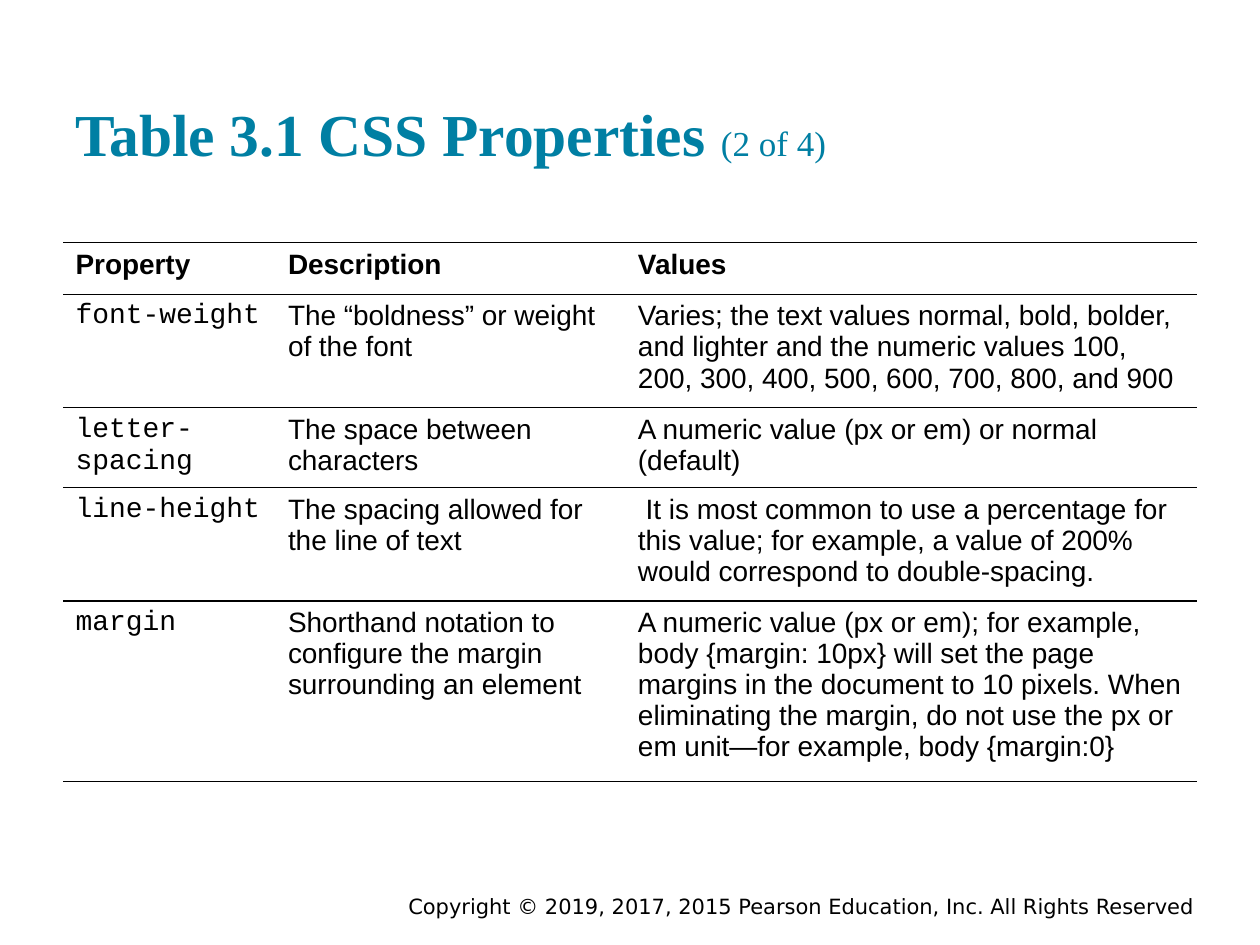
from pptx import Presentation
from pptx.dml.color import RGBColor
from pptx.enum.text import MSO_ANCHOR, PP_ALIGN
from pptx.oxml import parse_xml
from pptx.oxml.ns import nsdecls
from pptx.util import Pt

COLORS = {"title": "007FA3", "text": "000000", "rule": "000000", "cell": "FFFFFF"}
COLUMNS = [121.4, 200, 326.6]
ROW_HEIGHTS = [29.5, 60.5, 44.5, 60.5, 96]
ROWS = [
    ("Property", "Description", "Values"),
    ("font-weight", "The “boldness” or weight of the font",
     "Varies; the text values normal, bold, bolder, and lighter and the numeric "
     "values 100, 200, 300, 400, 500, 600, 700, 800, and 900"),
    ("letter-spacing", "The space between characters",
     "A numeric value (px or em) or normal (default)"),
    ("line-height", "The spacing allowed for the line of text",
     " It is most common to use a percentage for this value; for example, "
     "a value of 200% would correspond to double-spacing."),
    ("margin", "Shorthand notation to configure the margin surrounding an element",
     "A numeric value (px or em); for example, body {margin: 10px} will set the page "
     "margins in the document to 10 pixels. When eliminating the margin, do not use "
     "the px or em unit—for example, body {margin:0}"),
]


def add_run(p, text, font="Arial", size=16, color="text", bold=False):
    r = p.add_run()
    r.text = text
    r.font.name = font
    r.font.size = Pt(size)
    r.font.bold = bold
    r.font.color.rgb = RGBColor.from_string(COLORS[color])


class SlideBuilder:
    """Hold the slide and its style, and add each kind of element."""

    def __init__(self, prs):
        self.s = prs.slides.add_slide(prs.slide_layouts[6])
        self.rule = 1

    def text(self, box, runs, anchor, align=PP_ALIGN.LEFT, inset=7.2):
        tf = self.s.shapes.add_textbox(*map(Pt, box)).text_frame
        tf.word_wrap = True
        tf.vertical_anchor = anchor
        tf.margin_top = tf.margin_bottom = Pt(inset)
        p = tf.paragraphs[0]
        p.alignment = align
        for text, style in runs:
            add_run(p, text, **style)

    def borders(self, cell):
        tcPr = cell._tc.get_or_add_tcPr()
        solid = f'<a:solidFill><a:srgbClr val="{COLORS["rule"]}"/></a:solidFill>'
        for i, side in enumerate("LRTB"):
            fill = solid if side in "TB" else "<a:noFill/>"
            tcPr.insert(i, parse_xml(
                f'<a:ln{side} {nsdecls("a")} w="{Pt(self.rule)}">{fill}</a:ln{side}>'))

    def table(self, left, top, columns, heights, rows):
        frame = self.s.shapes.add_table(
            len(rows), len(columns), Pt(left), Pt(top), Pt(sum(columns)), Pt(sum(heights)))
        table = frame.table
        table.first_row = table.horz_banding = False
        for column, width in zip(table.columns, columns):
            column.width = Pt(width)
        for i, (row, height) in enumerate(zip(rows, heights)):
            table.rows[i].height = Pt(height)
            for j, text in enumerate(row):
                cell = table.cell(i, j)
                cell.fill.solid()
                cell.fill.fore_color.rgb = RGBColor.from_string(COLORS["cell"])
                self.borders(cell)
                font = "Courier New" if i and j == 0 else "Arial"
                add_run(cell.text_frame.paragraphs[0], text, font=font, bold=i == 0)


def main():
    prs = Presentation()
    prs.slide_width, prs.slide_height = Pt(720), Pt(540)
    slide = SlideBuilder(prs)
    title = {"font": "Times New Roman", "color": "title"}
    slide.text((36, 17.3, 648, 86.4), [
        ("Table 3.1 CSS Properties ", {**title, "size": 34, "bold": True}),
        ("(2 of 4)", {**title, "size": 20}),
    ], MSO_ANCHOR.BOTTOM)
    slide.table(36, 138.7, COLUMNS, ROW_HEIGHTS, ROWS)
    slide.text((213.8, 509, 476, 18), [
        ("Copyright © 2019, 2017, 2015 Pearson Education, Inc. All Rights Reserved",
         {"font": "DejaVu Sans", "size": 12}),
    ], MSO_ANCHOR.MIDDLE, PP_ALIGN.RIGHT, 0)
    prs.save("out.pptx")


if __name__ == "__main__":
    main()
